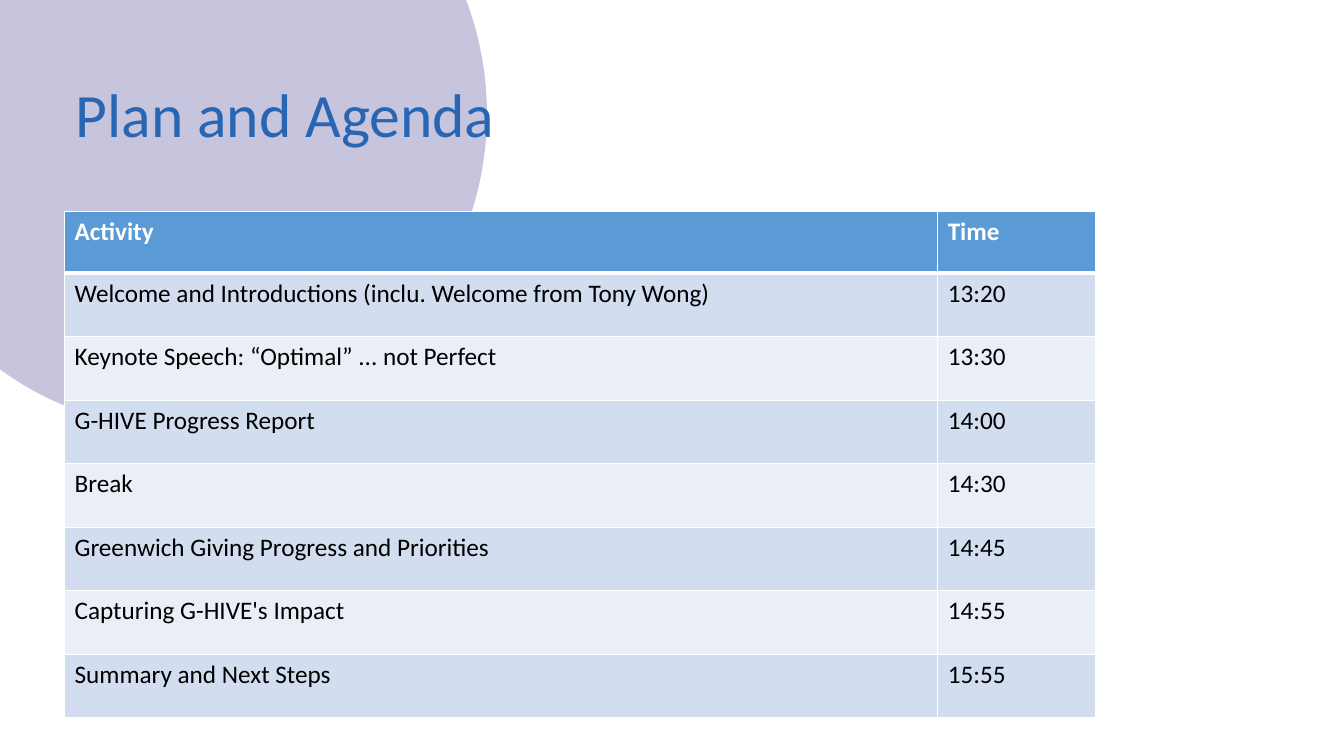
from lxml.etree import SubElement
from pptx import Presentation
from pptx.dml.color import RGBColor
from pptx.enum.shapes import MSO_SHAPE
from pptx.enum.text import MSO_ANCHOR, PP_ALIGN
from pptx.oxml.ns import qn
from pptx.util import Inches, Pt

AGENDA = [
    ("Activity", "Time"),
    ("Welcome and Introductions (inclu. Welcome from Tony Wong)", "13:20"),
    ("Keynote Speech: “Optimal” ... not Perfect", "13:30"),
    ("G-HIVE Progress Report", "14:00"),
    ("Break", "14:30"),
    ("Greenwich Giving Progress and Priorities", "14:45"),
    ("Capturing G-HIVE's Impact", "14:55"),
    ("Summary and Next Steps", "15:55"),
]


def color(code):
    return RGBColor.from_string(code)


def paint(fill, code):
    fill.solid()
    fill.fore_color.rgb = color(code)


def write(frame, text, size=18, ink="000000", bold=False, spacing=1.0):
    frame.text = text
    frame.word_wrap = True
    para = frame.paragraphs[0]
    para.alignment = PP_ALIGN.LEFT
    para.line_spacing = spacing
    font = para.runs[0].font
    font.name, font.size, font.bold = "Calibri", Pt(size), bold
    font.color.rgb = color(ink)


def edge(cell, side, width, code="FFFFFF"):
    """Draw one border of a cell; call before filling the cell."""
    line = SubElement(cell._tc.get_or_add_tcPr(), qn(f"a:ln{side}"), w=str(Pt(width)))
    SubElement(SubElement(line, qn("a:solidFill")), qn("a:srgbClr"), val=code)


class Deck:
    head, bands = "5B9BD5", ("EAEFF7", "D2DEEF")

    def __init__(self):
        self.file = Presentation()
        self.file.slide_width, self.file.slide_height = Inches(13.33), Inches(7.5)
        self.slide = self.file.slides.add_slide(self.file.slide_layouts[5])
        paint(self.slide.background.fill, "FFFFFF")

    def disc(self, box, code, alpha):
        """Add a see-through ellipse behind everything else."""
        shape = self.slide.shapes.add_shape(MSO_SHAPE.OVAL, *map(Inches, box))
        shape.shadow.inherit = False
        shape.line.fill.background()
        paint(shape.fill, code)
        tint = shape._element.spPr.find(".//" + qn("a:srgbClr"))
        SubElement(tint, qn("a:alpha"), val=str(alpha * 1000))
        self.slide.shapes._spTree.insert(2, shape._element)

    def title(self, box, text):
        shape = self.slide.shapes.title
        shape.left, shape.top, shape.width, shape.height = map(Inches, box)
        write(shape.text_frame, text, size=44, ink="2865B2", spacing=0.9)
        shape.text_frame.vertical_anchor = MSO_ANCHOR.MIDDLE

    def table(self, box, rows, widths, first, rest):
        frame = self.slide.shapes.add_table(len(rows), len(widths), *map(Inches, box))
        grid = frame.table
        for column, width in zip(grid.columns, widths):
            column.width = Inches(width)
        for r, row in enumerate(rows):
            top = r == 0
            grid.rows[r].height = Inches(first if top else rest)
            for c, text in enumerate(row):
                cell = grid.cell(r, c)
                write(cell.text_frame, text, ink="FFFFFF" if top else "000000", bold=top)
                edge(cell, "L", 1)
                edge(cell, "R", 1)
                if top:
                    edge(cell, "T", 1)
                edge(cell, "B", 3 if top else 1)
                paint(cell.fill, self.head if top else self.bands[r % 2])


def main():
    deck = Deck()
    deck.disc((-1.27, -1.99, 6.1, 6.24), "483C95", 30)
    deck.title((0.65, 0.44, 10.4, 1.45), "Plan and Agenda")
    deck.table((0.64, 2.1, 10.23, 5.01), AGENDA, (8.66, 1.57), 0.61, 0.63)
    deck.file.save("out.pptx")


if __name__ == "__main__":
    main()
